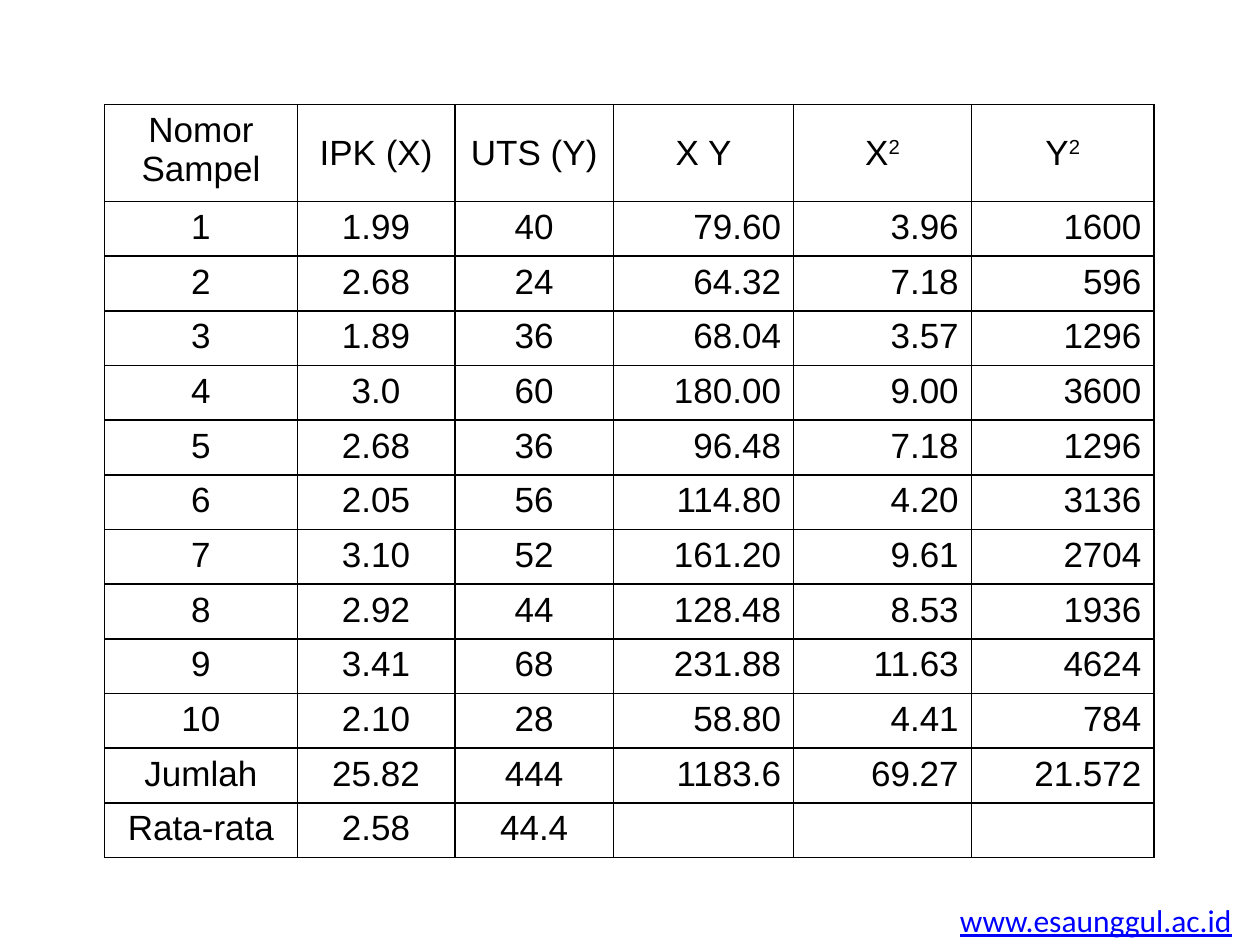
from dataclasses import dataclass

from lxml import etree
from pptx import Presentation
from pptx.dml.color import RGBColor
from pptx.enum import text as t
from pptx.oxml import ns
from pptx.util import Inches, Pt


@dataclass(frozen=True)
class Theme:
    ink: str = "000000"
    link: str = "0000FF"
    table_font: str = "Arial"
    link_font: str = "Calibri"
    table_size: int = 20
    link_size: int = 18
    border: int = 1


THEME = Theme()
COLUMN_WIDTHS = [1.53, 1.25, 1.26, 1.43, 1.41, 1.45]
HEADER_HEIGHT, ROW_HEIGHT = 0.77, 0.43
CENTRED_COLUMNS = 3
HEADER = [("Nomor Sampel", ""), ("IPK (X)", ""), ("UTS (Y)", ""),
          ("X Y", ""), ("X", "2"), ("Y", "2")]
SAMPLES = [
    ["1", "1.99", "40", "79.60", "3.96", "1600"],
    ["2", "2.68", "24", "64.32", "7.18", "596"],
    ["3", "1.89", "36", "68.04", "3.57", "1296"],
    ["4", "3.0", "60", "180.00", "9.00", "3600"],
    ["5", "2.68", "36", "96.48", "7.18", "1296"],
    ["6", "2.05", "56", "114.80", "4.20", "3136"],
    ["7", "3.10", "52", "161.20", "9.61", "2704"],
    ["8", "2.92", "44", "128.48", "8.53", "1936"],
    ["9", "3.41", "68", "231.88", "11.63", "4624"],
    ["10", "2.10", "28", "58.80", "4.41", "784"],
]
SUMMARY = [
    ["Jumlah", "25.82", "444", "1183.6", "69.27", "21.572"],
    ["Rata-rata", "2.58", "44.4", "", "", ""],
]


def write(frame, content, *, exponent="", font=THEME.table_font,
          size=THEME.table_size, color=THEME.ink, underline=None,
          align=t.PP_ALIGN.LEFT):
    """Fill the first paragraph, with an optional superscript after the text."""
    paragraph = frame.paragraphs[0]
    paragraph.alignment = align
    for part in filter(None, (content, exponent)):
        run = paragraph.add_run()
        run.text = part
        run.font.name = font
        run.font.size = Pt(size)
        run.font.color.rgb = RGBColor.from_string(color)
        run.font.underline = underline
    if exponent:
        run.font._element.set("baseline", "30000")


def outline(cell):
    """Draw the four borders, which must come before the fill in the XML."""
    properties = cell._tc.get_or_add_tcPr()
    for position, side in enumerate(("lnL", "lnR", "lnT", "lnB")):
        line = etree.Element(ns.qn(f"a:{side}"), w=str(Pt(THEME.border)))
        fill = etree.SubElement(line, ns.qn("a:solidFill"))
        etree.SubElement(fill, ns.qn("a:srgbClr"), val=THEME.ink)
        properties.insert(position, line)


def add_score_table(slide):
    rows = [[(value, "") for value in row] for row in SAMPLES + SUMMARY]
    rows.insert(0, HEADER)
    heights = [HEADER_HEIGHT] + [ROW_HEIGHT] * (len(rows) - 1)
    table = slide.shapes.add_table(
        len(rows), len(COLUMN_WIDTHS), Inches(0.83), Inches(0.83),
        Inches(sum(COLUMN_WIDTHS)), Inches(sum(heights))).table
    table.first_row = table.horz_banding = False
    for column, width in zip(table.columns, COLUMN_WIDTHS):
        column.width = Inches(width)
    for row, height in zip(table.rows, heights):
        row.height = Inches(height)

    for r, row in enumerate(rows):
        for c, (value, exponent) in enumerate(row):
            cell = table.cell(r, c)
            cell.fill.background()
            outline(cell)
            if r == 0 and c > 0:
                cell.vertical_anchor = t.MSO_ANCHOR.MIDDLE
            centred = r == 0 or c < CENTRED_COLUMNS
            write(cell.text_frame, value, exponent=exponent,
                  align=t.PP_ALIGN.CENTER if centred else t.PP_ALIGN.RIGHT)


def add_web_address(slide):
    box = slide.shapes.add_textbox(
        Inches(7.52), Inches(7.1), Inches(2.38), Inches(0.4))
    frame = box.text_frame
    frame.word_wrap = False
    frame.auto_size = t.MSO_AUTO_SIZE.SHAPE_TO_FIT_TEXT
    write(frame, "www.esaunggul.ac.id", font=THEME.link_font,
          size=THEME.link_size, color=THEME.link, underline=True)


def main():
    deck = Presentation()
    deck.slide_width, deck.slide_height = Inches(10), Inches(7.5)
    slide = deck.slides.add_slide(deck.slide_layouts[6])
    add_web_address(slide)
    add_score_table(slide)
    deck.save("out.pptx")


if __name__ == "__main__":
    main()
